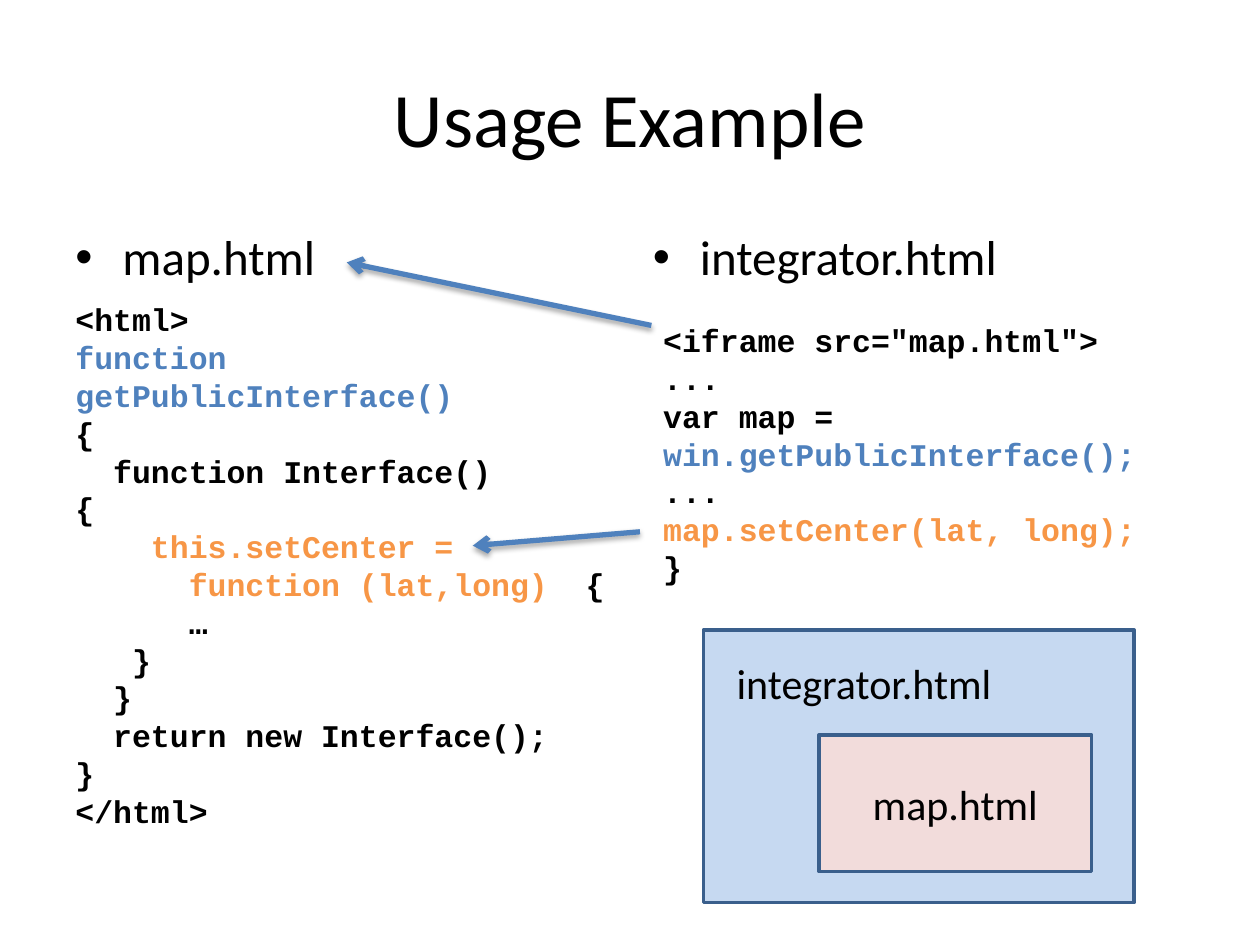
from dataclasses import dataclass

from lxml import etree
from pptx import Presentation
from pptx import util as u
from pptx.dml.color import RGBColor
from pptx.enum import shapes, text
from pptx.oxml import parse_xml
from pptx.oxml.ns import nsdecls, qn

COLORS = {
    "black": "000000",
    "blue": "4F81BD",
    "orange": "F79646",
    "outline": "3A5F8C",
    "outer": "C6D9F1",
    "inner": "F2DCDB",
}
CODE_SIZE = 18
CODE_CHAR = u.Pt(CODE_SIZE * 0.6)


@dataclass
class Box:
    x: float
    y: float
    w: float
    h: float

    def lengths(self) -> list:
        return [u.Cm(v) for v in (self.x, self.y, self.w, self.h)]


@dataclass
class Line:
    runs: list
    indent: int = 0


@dataclass
class Arrow:
    start: tuple
    end: tuple


@dataclass
class Panel:
    box: Box
    fill: str
    label: str = ""


def color(name: str) -> RGBColor:
    return RGBColor.from_string(COLORS[name])


def add_run(p, content: str, *, size=24, font="Calibri", fill="black", bold=False):
    r = p.add_run()
    r.text = content
    r.font.size = u.Pt(size)
    r.font.name = font
    r.font.bold = bold
    r.font.color.rgb = color(fill)


def add_text_frame(s, box: Box):
    tf = s.shapes.add_textbox(*box.lengths()).text_frame
    tf.word_wrap = True
    return tf


def add_bullet(s, box: Box, content: str) -> None:
    p = add_text_frame(s, box).paragraphs[0]
    p.space_before = u.Pt(5.6)
    add_run(p, content, size=28)
    pPr = p._p.get_or_add_pPr()
    pPr.set("marL", str(u.Cm(0.95)))
    pPr.set("indent", str(-u.Cm(0.95)))
    etree.SubElement(pPr, qn("a:buFont")).set("typeface", "Arial")
    etree.SubElement(pPr, qn("a:buChar")).set("char", "•")


def add_code(s, box: Box, lines: list) -> None:
    tf = add_text_frame(s, box)
    for i, line in enumerate(lines):
        p = tf.add_paragraph() if i else tf.paragraphs[0]
        p._p.get_or_add_pPr().set("marL", str(line.indent * CODE_CHAR))
        for content, fill in line.runs:
            add_run(p, content, size=CODE_SIZE, font="Courier New", fill=fill, bold=True)


def add_arrow(s, arrow: Arrow) -> None:
    ends = [u.Cm(v) for v in arrow.start + arrow.end]
    c = s.shapes.add_connector(shapes.MSO_CONNECTOR.STRAIGHT, *ends)
    c.line.color.rgb = color("blue")
    c.line.width = u.Pt(3)
    etree.SubElement(c.line._get_or_add_ln(), qn("a:tailEnd")).set("type", "arrow")
    c._element.spPr.append(parse_xml(
        f'<a:effectLst {nsdecls("a")}>'
        f'<a:outerShdw blurRad="{u.Pt(3.1)}" dist="{u.Pt(1.8)}" dir="5400000" rotWithShape="0">'
        f'<a:srgbClr val="{COLORS["black"]}"><a:alpha val="35000"/></a:srgbClr>'
        '</a:outerShdw></a:effectLst>'))


def add_panel(s, panel: Panel) -> None:
    sp = s.shapes.add_shape(shapes.MSO_SHAPE.RECTANGLE, *panel.box.lengths())
    sp.shadow.inherit = False
    sp.fill.solid()
    sp.fill.fore_color.rgb = color(panel.fill)
    sp.line.color.rgb = color("outline")
    sp.line.width = u.Pt(2)
    if panel.label:
        tf = sp.text_frame
        tf.vertical_anchor = text.MSO_ANCHOR.MIDDLE
        tf.paragraphs[0].alignment = text.PP_ALIGN.CENTER
        add_run(tf.paragraphs[0], panel.label)


def add_title(s, box: Box, content: str) -> None:
    sp = s.shapes.title
    sp.left, sp.top, sp.width, sp.height = box.lengths()
    tf = sp.text_frame
    tf.vertical_anchor = text.MSO_ANCHOR.MIDDLE
    tf.paragraphs[0].alignment = text.PP_ALIGN.CENTER
    add_run(tf.paragraphs[0], content, size=44)


MAP_CODE = [
    Line([("<html>", "black")]),
    Line([("function getPublicInterface()", "blue")]),
    Line([("{", "black")]),
    Line([("function Interface()", "black")], 2),
    Line([("{", "black")]),
    Line([("this.setCenter =", "orange")], 4),
    Line([("function (lat,long)", "orange"), ("  {", "black")], 6),
    Line([("…", "black")], 6),
    Line([("}", "black")], 3),
    Line([("}", "black")], 2),
    Line([("return new Interface();", "black")], 2),
    Line([("}", "black")]),
    Line([("</html>", "black")]),
]
INTEGRATOR_CODE = [
    Line([('<iframe src="map.html">', "black")]),
    Line([("...", "black")]),
    Line([("var map = ", "black"), ("win.getPublicInterface();", "blue")]),
    Line([("...", "black")]),
    Line([("map.setCenter(lat, long);", "orange")]),
    Line([("}", "black")]),
]
ARROWS = [
    Arrow((12.9, 10.72), (9.53, 11)),
    Arrow((13.13, 6.56), (6.99, 5.29)),
]
PANELS = [
    Panel(Box(14.18, 12.7, 8.68, 5.5), "outer"),
    Panel(Box(16.51, 14.82, 5.5, 2.75), "inner", "map.html"),
]


def main() -> None:
    prs = Presentation()
    prs.slide_width, prs.slide_height = u.Cm(25.4), u.Cm(19.05)
    s = prs.slides.add_slide(prs.slide_layouts[5])
    add_title(s, Box(1.27, 0.76, 22.86, 3.18), "Usage Example")
    for x, name in ((1.27, "map.html"), (12.91, "integrator.html")):
        add_bullet(s, Box(x, 4.45, 11.22, 12.57), name)
    add_code(s, Box(1.27, 5.93, 11.43, 11.02), MAP_CODE)
    add_code(s, Box(13.12, 6.35, 11.64, 6.4), INTEGRATOR_CODE)
    for arrow in ARROWS:
        add_arrow(s, arrow)
    for panel in PANELS:
        add_panel(s, panel)
    label = add_text_frame(s, Box(14.6, 13.12, 6.35, 1.28))
    add_run(label.paragraphs[0], "integrator.html")
    prs.save("out.pptx")


if __name__ == "__main__":
    main()
